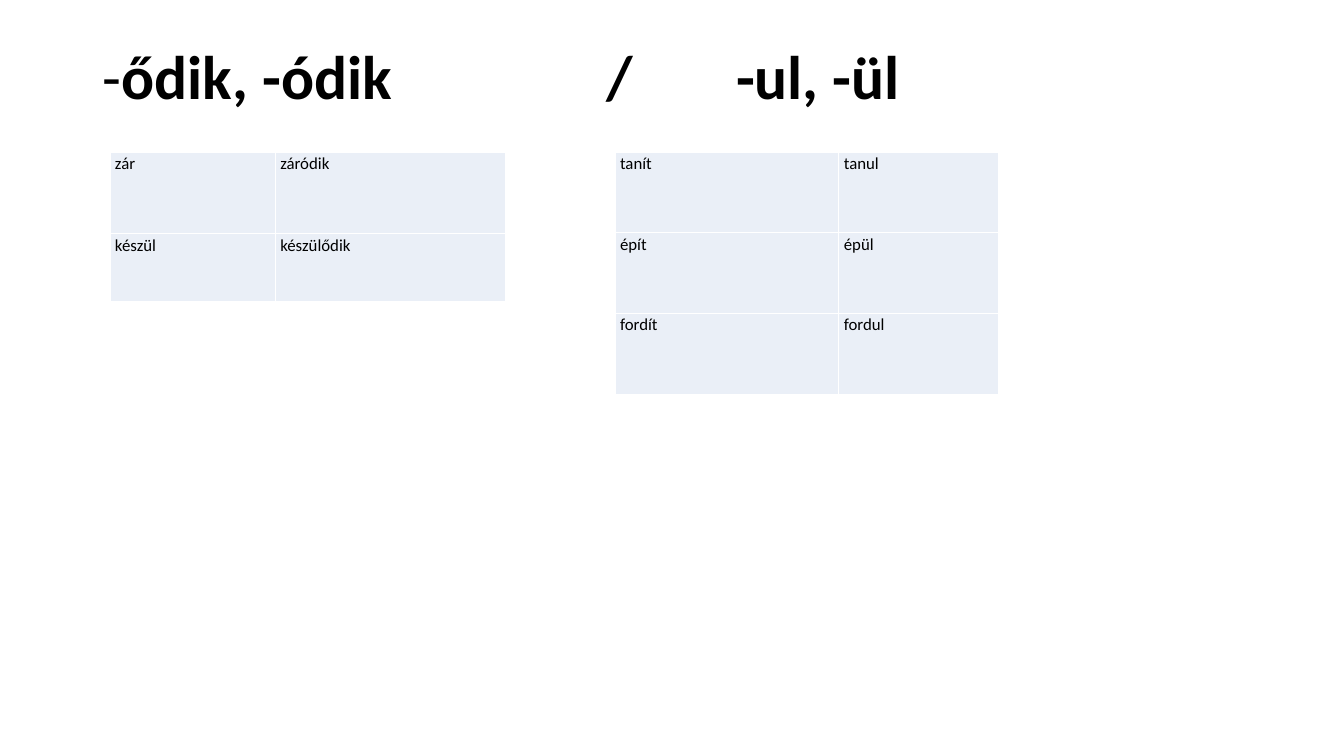
import dataclasses

import lxml.etree
import pptx
import pptx.dml.color
import pptx.enum.text
import pptx.oxml.ns
import pptx.util


@dataclasses.dataclass(frozen=True)
class Theme:
    font: str = "Calibri"
    title_size: int = 44
    cell_size: int = 12
    text: str = "000000"
    cell: str = "EAEFF7"
    border: str = "FFFFFF"
    border_width: int = 1


THEME = Theme()
WIDTH, HEIGHT = 13.33, 7.5
TABLE_TOP = 0.2013


def inches(value):
    return pptx.util.Inches(value)


def rgb(value):
    return pptx.dml.color.RGBColor.from_string(value)


def add_element(parent, tag, **attributes):
    return lxml.etree.SubElement(parent, pptx.oxml.ns.qn(tag), attributes)


def format_paragraph(p, size, spacing):
    p.line_spacing = spacing
    p.font.name = THEME.font
    p.font.size = pptx.util.Pt(size)
    p.font.color.rgb = rgb(THEME.text)


def add_title(s, plain, bold, tab_stops):
    sp = s.shapes.title
    sp.left, sp.top = inches(0.92), inches(0.4)
    sp.width, sp.height = inches(11.5), inches(1.45)
    tf = sp.text_frame
    tf.word_wrap = True
    tf.auto_size = pptx.enum.text.MSO_AUTO_SIZE.NONE
    tf.vertical_anchor = pptx.enum.text.MSO_ANCHOR.TOP
    tf.margin_top = inches(0.06)
    p = tf.paragraphs[0]
    p.alignment = pptx.enum.text.PP_ALIGN.LEFT
    tabs = add_element(p._p.get_or_add_pPr(), "a:tabLst")
    for stop in tab_stops:
        add_element(tabs, "a:tab", pos=str(inches(stop)), algn="l")
    format_paragraph(p, THEME.title_size, 0.9)
    for text, is_bold in ((plain, False), (bold, True)):
        r = p.add_run()
        r.text = text
        r.font.bold = is_bold


def add_borders(cell):
    properties = cell._tc.get_or_add_tcPr()
    for side in ("a:lnL", "a:lnR", "a:lnT", "a:lnB"):
        line = add_element(properties, side, w=str(pptx.util.Pt(THEME.border_width)))
        add_element(add_element(line, "a:solidFill"), "a:srgbClr", val=THEME.border)


def format_cell(cell, text):
    cell.margin_left = cell.margin_right = inches(0.05)
    cell.margin_top = cell.margin_bottom = 0
    add_borders(cell)
    cell.fill.solid()
    cell.fill.fore_color.rgb = rgb(THEME.cell)
    p = cell.text_frame.paragraphs[0]
    p.text = text
    format_paragraph(p, THEME.cell_size, 1.07)


def add_verb_table(s, left, columns, rows, verbs):
    table = s.shapes.add_table(
        len(rows), len(columns), inches(left), inches(HEIGHT * TABLE_TOP),
        inches(sum(columns)), inches(sum(rows))).table
    table.first_row = table.horz_banding = False
    for column, width in zip(table.columns, columns):
        column.width = inches(width)
    for row, height, pair in zip(table.rows, rows, verbs):
        row.height = inches(height)
        for cell, verb in zip(row.cells, pair):
            format_cell(cell, verb)


def main():
    prs = pptx.Presentation()
    prs.slide_width, prs.slide_height = inches(WIDTH), inches(HEIGHT)
    s = prs.slides.add_slide(prs.slide_layouts[5])
    add_title(s, "-", "ődik, -ódik\t/\t-ul, -ül", (5, 6.28))
    add_verb_table(s, 1.09, (1.64, 2.28), (0.81, 0.67),
                   (("zár", "záródik"), ("készül", "készülődik")))
    add_verb_table(s, 6.1, (2.22, 1.58), (0.8,) * 3,
                   (("tanít", "tanul"), ("épít", "épül"), ("fordít", "fordul")))
    prs.save("out.pptx")


if __name__ == "__main__":
    main()
